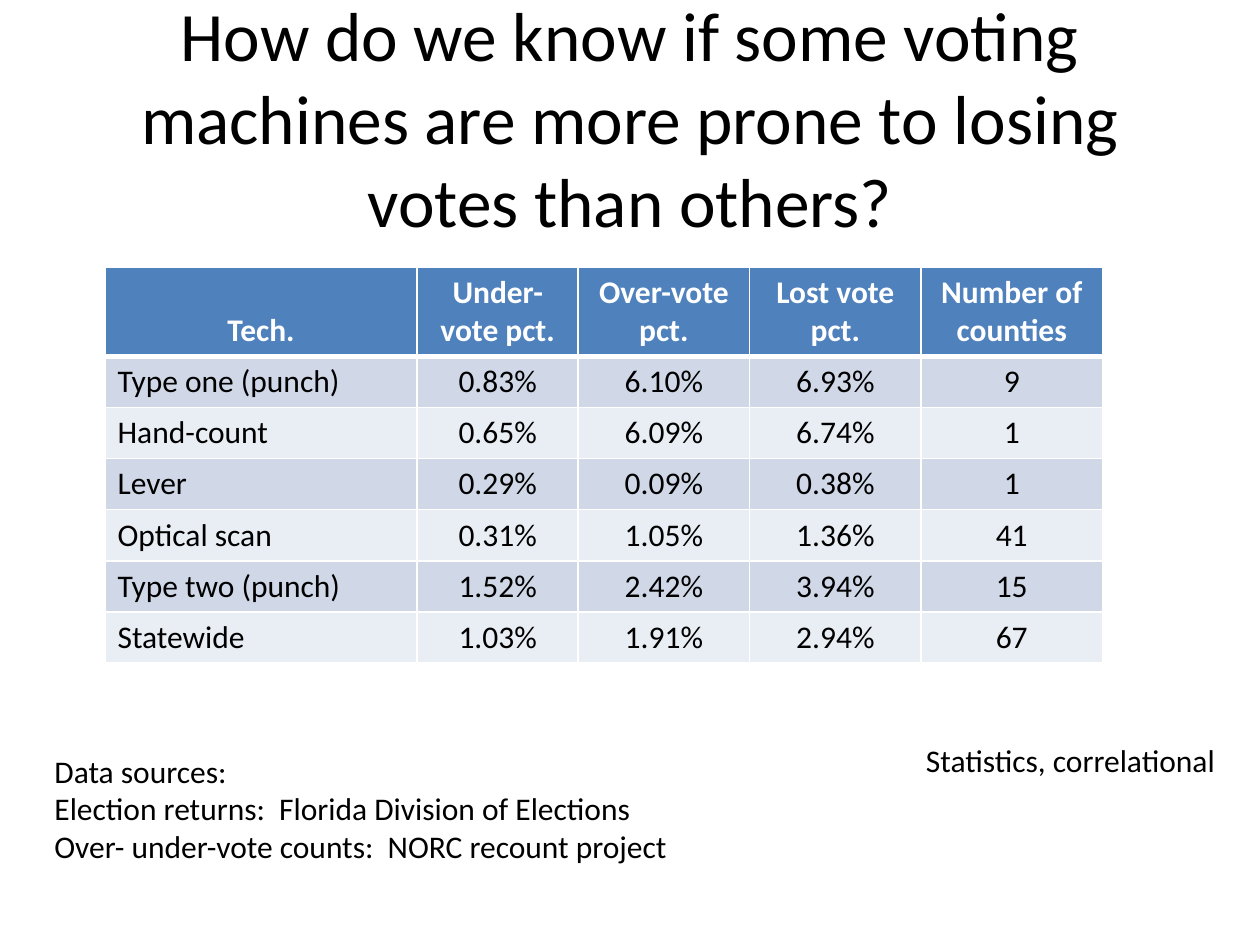
import pptx
import pptx.util
import pptx.dml.color
import pptx.enum.text
import pptx.oxml
from dataclasses import dataclass

Pt = pptx.util.Pt
ALIGN = pptx.enum.text.PP_ALIGN
ANCHOR = pptx.enum.text.MSO_ANCHOR
AUTO = pptx.enum.text.MSO_AUTO_SIZE
NS = 'xmlns:a="http://schemas.openxmlformats.org/drawingml/2006/main"'


@dataclass(frozen=True)
class Theme:
    font: str = "Calibri"
    title: float = 39.6
    body: float = 18
    text: str = "000000"
    light: str = "FFFFFF"
    header: str = "4F81BD"
    bands: tuple = ("D0D8E8", "E9EDF4")


T = Theme()

HEADER = ["Tech.", "Under-vote pct.", "Over-vote pct.", "Lost vote pct.",
          "Number of counties"]
ROWS = [
    ["Type one (punch)", "0.83%", "6.10%", "6.93%", "9"],
    ["Hand-count", "0.65%", "6.09%", "6.74%", "1"],
    ["Lever", "0.29%", "0.09%", "0.38%", "1"],
    ["Optical scan", "0.31%", "1.05%", "1.36%", "41"],
    ["Type two (punch)", "1.52%", "2.42%", "3.94%", "15"],
    ["Statewide", "1.03%", "1.91%", "2.94%", "67"],
]
COL_WIDTHS = [178.4, 92, 98, 98, 103.6]
ROW_HEIGHT = 29.2
SOURCES = [
    "Data sources:",
    "Election returns:  Florida Division of Elections",
    "Over- under-vote counts:  NORC recount project",
]


def rgb(value):
    return pptx.dml.color.RGBColor.from_string(value)


def write(tf, *lines, size=T.body, color=T.text, bold=False, align=ALIGN.LEFT):
    """Fill a text frame, one paragraph for each line."""
    for i, line in enumerate(lines):
        p = tf.add_paragraph() if i else tf.paragraphs[0]
        p.alignment = align
        r = p.add_run()
        r.text = line
        r.font.name = T.font
        r.font.size = Pt(size)
        r.font.bold = bold
        r.font.color.rgb = rgb(color)


def set_borders(cell, bottom=1):
    """Draw white cell borders; they must stand before the fill."""
    tcPr = cell._tc.get_or_add_tcPr()
    widths = {"lnL": 1, "lnR": 1, "lnT": 1, "lnB": bottom}
    for i, (tag, width) in enumerate(widths.items()):
        tcPr.insert(i, pptx.oxml.parse_xml(
            f'<a:{tag} {NS} w="{Pt(width)}"><a:solidFill>'
            f'<a:srgbClr val="{T.light}"/></a:solidFill></a:{tag}>'))


def add_title(s, text, left, top, width, height):
    sp = s.shapes.title
    sp.left, sp.top, sp.width, sp.height = map(Pt, (left, top, width, height))
    tf = sp.text_frame
    tf.word_wrap = True
    tf.auto_size = AUTO.NONE
    tf.vertical_anchor = ANCHOR.MIDDLE
    write(tf, text, size=T.title, align=ALIGN.CENTER)


def add_note(s, lines, left, top, width, height):
    sp = s.shapes.add_textbox(*map(Pt, (left, top, width, height)))
    tf = sp.text_frame
    tf.word_wrap = False
    tf.auto_size = AUTO.SHAPE_TO_FIT_TEXT
    write(tf, *lines)


def add_vote_table(s, left, top):
    data = [HEADER] + ROWS
    table = s.shapes.add_table(
        len(data), len(HEADER), Pt(left), Pt(top),
        Pt(sum(COL_WIDTHS)), Pt(ROW_HEIGHT * len(data))).table
    for column, width in zip(table.columns, COL_WIDTHS):
        column.width = Pt(width)
    for i, values in enumerate(data):
        head = i == 0
        fill = T.header if head else T.bands[(i - 1) % 2]
        table.rows[i].height = Pt(ROW_HEIGHT)
        for j, value in enumerate(values):
            cell = table.cell(i, j)
            cell.fill.solid()
            cell.fill.fore_color.rgb = rgb(fill)
            cell.vertical_anchor = ANCHOR.BOTTOM if head else ANCHOR.TOP
            set_borders(cell, bottom=3 if head else 1)
            write(cell.text_frame, value, bold=head,
                  color=T.light if head else T.text,
                  align=ALIGN.CENTER if head or j else ALIGN.LEFT)


def main():
    prs = pptx.Presentation()
    prs.slide_width, prs.slide_height = Pt(720), Pt(540)
    s = prs.slides.add_slide(prs.slide_layouts[5])

    # Lost votes by voting technology
    add_vote_table(s, 60, 152.5)

    # Data sources
    add_note(s, SOURCES, 24, 426, 370, 72.7)

    # Question
    add_title(s, "How do we know if some voting machines are more prone to "
                 "losing votes than others?", 36, 21.6, 648, 90)

    # Method label
    add_note(s, ["Statistics, correlational"], 522, 420, 181.4, 29)

    prs.save("out.pptx")


if __name__ == "__main__":
    main()
